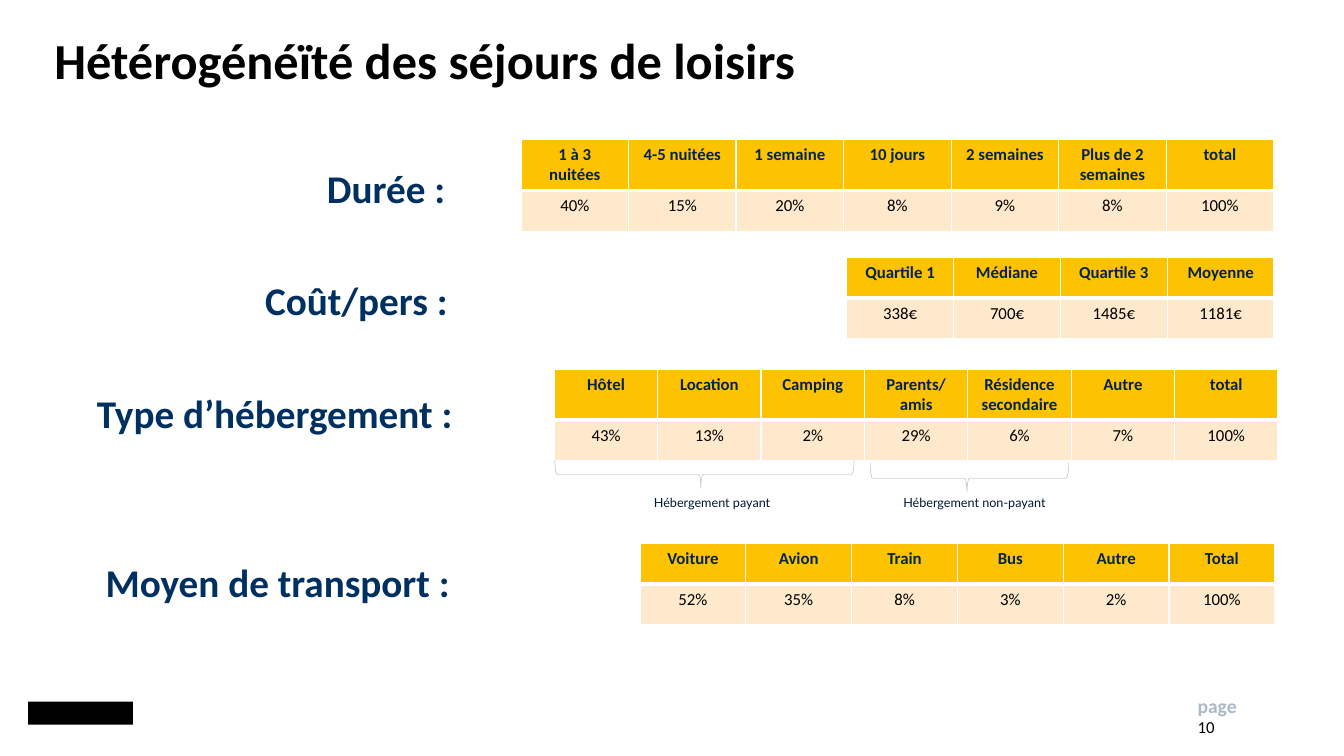
"""Build the slide on how varied leisure stays are, with four small tables."""
from lxml.etree import SubElement
from pptx import Presentation
from pptx.dml.color import RGBColor
from pptx.enum.shapes import MSO_SHAPE as SHAPE
from pptx.enum.text import MSO_ANCHOR as ANCHOR, MSO_AUTO_SIZE as AUTO, PP_ALIGN as AL
from pptx.oxml.ns import qn
from pptx.util import Cm, Pt


def color(value):
    return RGBColor.from_string(value)


def write(p, text, hex_color, align=AL.LEFT, **font):
    p.alignment = align
    r = p.add_run()
    r.text = text
    r.font.color.rgb = color(hex_color)
    for key, value in {"name": "Calibri", "bold": False, **font}.items():
        setattr(r.font, key, value)


prs = Presentation()
prs.slide_width, prs.slide_height = Cm(33.87), Cm(19.05)
s = prs.slides.add_slide(prs.slide_layouts[1])
title, body = s.placeholders

frames = [(title, (1.37, 0.43, 19.76, 2.34), ANCHOR.MIDDLE),
          (body, (2.44, 4.27, 27.71, 12.75), ANCHOR.TOP)]
for sp, box, anchor in frames:
    sp.left, sp.top, sp.width, sp.height = map(Cm, box)
    tf = sp.text_frame
    settings = {"margin_left": 0, "margin_top": 0, "margin_right": 0, "margin_bottom": 0,
                "word_wrap": True, "auto_size": AUTO.NONE, "vertical_anchor": anchor}
    for key, value in settings.items():
        setattr(tf, key, value)

p = title.text_frame.paragraphs[0]
p.line_spacing = 0.9
write(p, "Hétérogénéïté des séjours de loisirs", "000000", size=Pt(36), bold=True)

labels = [("Durée :", 5.8, 0), ("Coût/pers :", 4.24, 50),
          ("Type d’hébergement :", 0, 50), ("Moyen de transport :", 0.22, 91)]
tf = body.text_frame
for i, (text, indent, before) in enumerate(labels):
    p = tf.add_paragraph() if i else tf.paragraphs[0]
    p.line_spacing, p.space_before = 0.9, Pt(before)
    write(p, text, "003060", size=Pt(28), bold=True)
    pPr = p._p.get_or_add_pPr()
    pPr.set("marL", str(Cm(indent)))
    pPr.set("indent", "0")
    SubElement(pPr, qn("a:buNone"))

tables = [
    (13.13, 3.51, 18.97, 1.27,
     ["1 à 3 nuitées", "4-5 nuitées", "1 semaine", "10 jours", "2 semaines",
      "Plus de 2 semaines", "total"],
     ["40%", "15%", "20%", "8%", "9%", "8%", "100%"]),
    (21.34, 6.48, 10.77, 1.03,
     ["Quartile 1", "Médiane", "Quartile 3", "Moyenne"],
     ["338€", "700€", "1485€", "1181€"]),
    (13.97, 9.3, 18.24, 1.27,
     ["Hôtel", "Location", "Camping", "Parents/ amis", "Résidence secondaire",
      "Autre", "total"],
     ["43%", "13%", "2%", "29%", "6%", "7%", "100%"]),
    (16.13, 13.69, 16, 1.03,
     ["Voiture", "Avion", "Train", "Bus", "Autre", "Total"],
     ["52%", "35%", "8%", "3%", "2%", "100%"]),
]
row_styles = [
    {"fill": "FDC300", "text": "04244B", "bold": True,
     "borders": {"L": 1, "R": 1, "T": 1, "B": 3}},
    {"fill": "FEE9CC", "text": "000000", "bold": False,
     "borders": {"L": 1, "R": 1, "T": 3, "B": 1}},
]
for x, y, w, head_h, *rows in tables:
    tbl = s.shapes.add_table(2, len(rows[0]), Cm(x), Cm(y), Cm(w), Cm(head_h + 1.03)).table
    tbl.horz_banding = False
    tbl.rows[0].height, tbl.rows[1].height = Cm(head_h), Cm(1.03)
    for i, (texts, style) in enumerate(zip(rows, row_styles)):
        for j, text in enumerate(texts):
            cell = tbl.cell(i, j)
            write(cell.text_frame.paragraphs[0], text, style["text"], AL.CENTER,
                  size=Pt(12), bold=style["bold"])
            tcPr = cell._tc.get_or_add_tcPr()
            for side, width in style["borders"].items():
                ln = SubElement(tcPr, qn(f"a:ln{side}"), w=str(Pt(width)))
                SubElement(SubElement(ln, qn("a:solidFill")), qn("a:srgbClr"), val="FFFFFF")
            cell.fill.solid()
            cell.fill.fore_color.rgb = color(style["fill"])

for x, y, w, h in [(17.4, 8.18, 0.71, 7.54), (24.05, 9.55, 0.76, 5)]:
    brace = s.shapes.add_shape(SHAPE.LEFT_BRACE, Cm(x), Cm(y), Cm(w), Cm(h))
    brace.rotation = 270
    brace.adjustments[0], brace.adjustments[1] = 0.083, 0.488
    brace.shadow.inherit = False
    brace.fill.background()
    brace.line.color.rgb = color("A6A6A6")
    brace.line.width = Pt(0.25)

small = {"name": "Lato", "size": Pt(9)}
notes = [
    ((15.34, 12.52, 5.21, 0.61), "Hébergement payant", "001932", AL.CENTER, 0.9, small),
    ((21.95, 12.52, 5.21, 0.61), "Hébergement non-payant", "001932", AL.CENTER, 0.9, small),
    ((30.18, 17.48, 1.5, 0.51), "page", "ABBAC9", AL.LEFT, 1, {"size": Pt(14), "bold": True}),
    ((30.18, 18.06, 1.7, 0.71), "10", "000000", AL.LEFT, 1, {"size": Pt(12)}),
]
for box, text, hex_color, align, spacing, font in notes:
    tf = s.shapes.add_textbox(*map(Cm, box)).text_frame
    tf.word_wrap = True
    tf.margin_left = tf.margin_top = tf.margin_right = tf.margin_bottom = 0
    p = tf.paragraphs[0]
    p.line_spacing = spacing
    write(p, text, hex_color, align, **font)

emblem = s.shapes.add_shape(SHAPE.RECTANGLE, Cm(0.71), Cm(17.68), Cm(2.64), Cm(0.58))
emblem.shadow.inherit = False
emblem.fill.solid()
emblem.fill.fore_color.rgb = color("000000")
emblem.line.fill.background()

prs.save("out.pptx")
